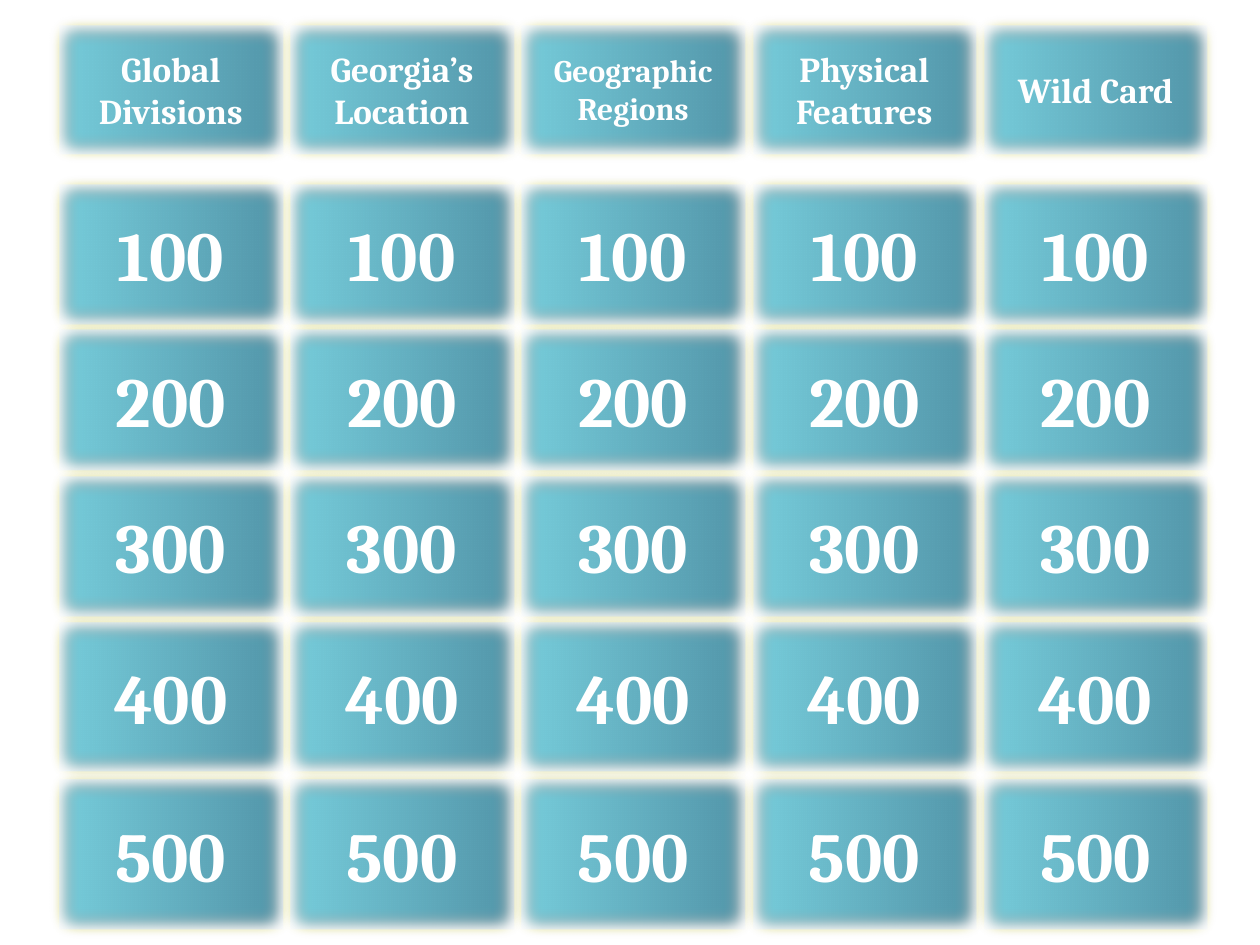
from dataclasses import dataclass

from lxml.etree import SubElement
from pptx import Presentation
from pptx.dml.color import RGBColor
from pptx.enum.shapes import MSO_SHAPE as Preset
from pptx.enum.text import MSO_ANCHOR as Anchor, PP_ALIGN as Align
from pptx.oxml.ns import qn
from pptx.shapes.autoshape import Shape
from pptx.slide import Slide
from pptx.util import Cm, Pt

AQUA = RGBColor(0x78, 0xCF, 0xDD)
TEAL = RGBColor(0x52, 0x95, 0xA9)
YELLOW = RGBColor(0xFF, 0xFF, 0x00)
WHITE = RGBColor(0xFF, 0xFF, 0xFF)
FONT = "Cambria"

GRID_LEFT = 1.12
COLUMN_STEP = 4.66
BUTTON_WIDTH = 4.65


@dataclass(frozen=True)
class Category:
    name: str
    size: int = 20
    wrap: bool = True


@dataclass(frozen=True)
class PointRow:
    points: int
    top: float
    height: float


@dataclass(frozen=True)
class Button:
    label: str
    column: int
    top: float
    height: float
    size: int
    wrap: bool = False


CATEGORIES = [
    Category("Global Divisions"),
    Category("Georgia’s Location"),
    Category("Geographic Regions", size=18),
    Category("Physical Features"),
    Category("Wild Card", wrap=False),
]

POINT_ROWS = [
    PointRow(100, 3.63, 2.97),
    PointRow(200, 6.57, 2.97),
    PointRow(300, 9.52, 2.97),
    PointRow(400, 12.47, 3.15),
    PointRow(500, 15.63, 3.18),
]


def soften(shape: Shape) -> None:
    shape.shadow.inherit = False
    effects = shape._element.spPr.find(qn("a:effectLst"))
    shadow = SubElement(effects, qn("a:outerShdw"), blurRad=str(Pt(5)),
                        dist="0", dir="0", rotWithShape="0")
    color = SubElement(shadow, qn("a:srgbClr"), val="000000")
    SubElement(color, qn("a:alpha"), val="40000")
    SubElement(effects, qn("a:softEdge"), rad="112500")


def draw_button(page: Slide, button: Button) -> None:
    shape = page.shapes.add_shape(
        Preset.ACTION_BUTTON_CUSTOM,
        Cm(GRID_LEFT + button.column * COLUMN_STEP), Cm(button.top),
        Cm(BUTTON_WIDTH), Cm(button.height))
    shape.fill.gradient()
    shape.fill.gradient_angle = 0
    for stop, color in zip(shape.fill.gradient_stops, (AQUA, TEAL)):
        stop.color.rgb = color
    shape.line.color.rgb = YELLOW
    shape.line.width = Pt(4.5)
    soften(shape)

    box = shape.text_frame
    box.word_wrap = button.wrap
    box.vertical_anchor = Anchor.MIDDLE
    para = box.paragraphs[0]
    para.alignment = Align.CENTER
    span = para.add_run()
    span.text = button.label
    span.font.name = FONT
    span.font.size = Pt(button.size)
    span.font.bold = True
    span.font.color.rgb = WHITE


def main() -> None:
    deck = Presentation()
    deck.slide_width, deck.slide_height = Cm(25.4), Cm(19.05)
    page = deck.slides.add_slide(deck.slide_layouts[6])
    for column, category in enumerate(CATEGORIES):
        draw_button(page, Button(category.name, column, 0.43, 2.74,
                                 category.size, category.wrap))
        for row in POINT_ROWS:
            draw_button(page, Button(str(row.points), column, row.top,
                                     row.height, 40))
    deck.save("out.pptx")


if __name__ == "__main__":
    main()
